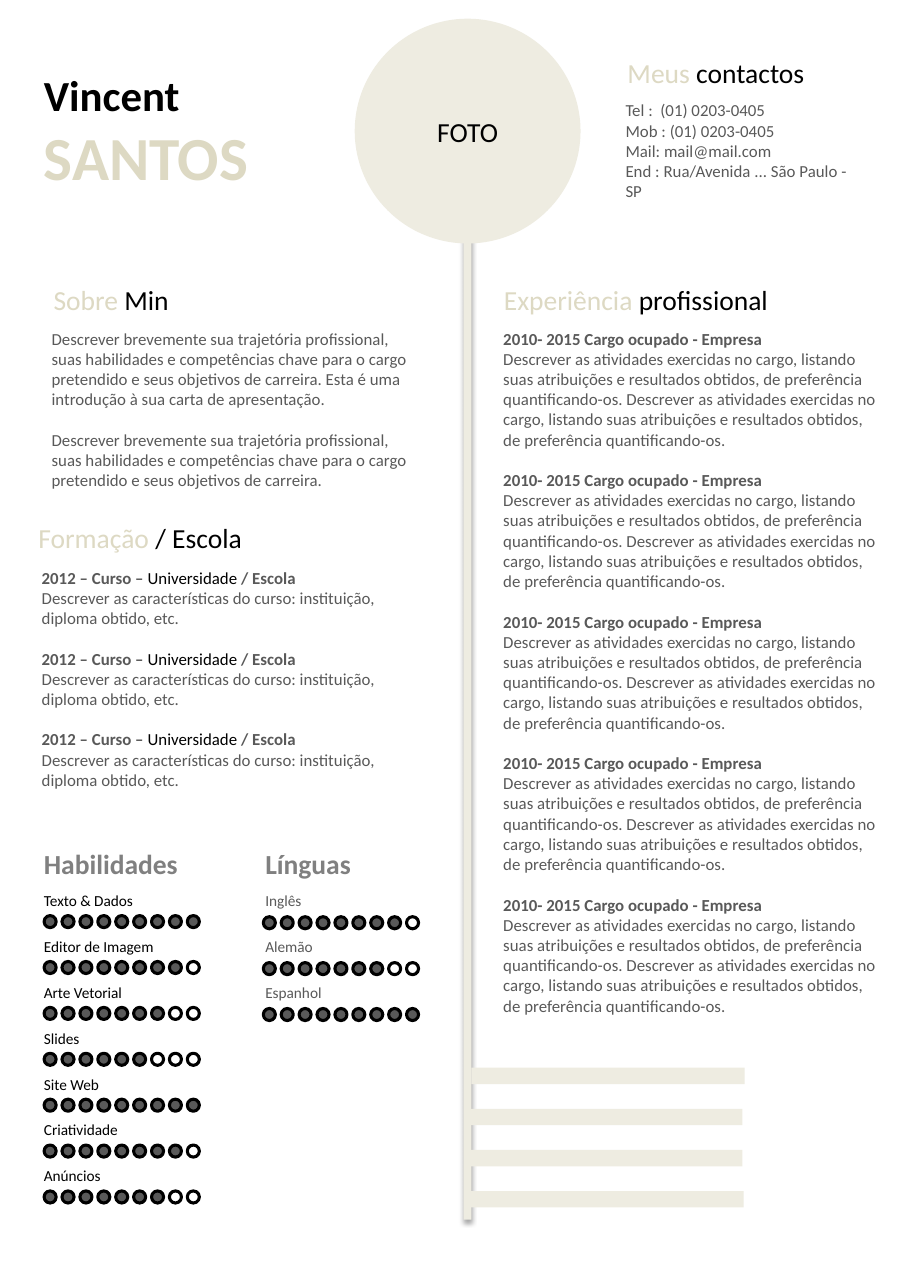
from lxml import etree
from pptx import Presentation
from pptx.dml.color import RGBColor
from pptx.enum import shapes, text
from pptx.oxml import ns
from pptx.util import Inches, Pt

COLORS = {"cream": "EEECE1", "sand": "DDD9C3", "gray": "595959",
          "heading": "808080", "black": "000000", "white": "FFFFFF"}
FONT = "Calibri"
LINE_GAP = 13.2
DOT_COUNT, DOT_SIZE, DOT_STEP, ROW_STEP = 9, 0.11, 0.1625, 0.4165
RECT = shapes.MSO_SHAPE.RECTANGLE
OVAL = shapes.MSO_SHAPE.OVAL

ABOUT = ("Descrever brevemente sua trajetória profissional, suas habilidades e "
         "competências chave para o cargo pretendido e seus objetivos de carreira.")
ABOUT_END = " Esta é uma introdução à sua carta de apresentação."
JOB_TITLE = "2010- 2015 Cargo ocupado - Empresa"
JOB_TASKS = ("Descrever as atividades exercidas no cargo, listando suas atribuições e "
             "resultados obtidos, de preferência quantificando-os.")
COURSE = "Descrever as características do curso: instituição, diploma obtido, etc."
CONTACTS = ["Tel :  (01) 0203-0405", "Mob : (01) 0203-0405", "Mail: mail@mail.com",
            "End : Rua/Avenida ... São Paulo - SP"]
SKILLS = [("Texto & Dados", 9), ("Editor de Imagem", 8), ("Arte Vetorial", 7),
          ("Slides", 6), ("Site Web", 9), ("Criatividade", 8), ("Anúncios", 7)]
LANGUAGES = [("Inglês", 8), ("Alemão", 7), ("Espanhol", 9)]


def rgb(name):
    """Return the palette colour with this name."""
    return RGBColor.from_string(COLORS[name])


def add_run(paragraph, words, size=11, color="gray", bold=False):
    """Add one formatted run to a paragraph."""
    run = paragraph.add_run()
    run.text = words
    run.font.name = FONT
    run.font.size = Pt(size)
    run.font.bold = bold
    run.font.color.rgb = rgb(color)


def add_text(slide, box, paragraphs, wrap=True, align=text.PP_ALIGN.LEFT):
    """Add a text box from (space before, runs) pairs."""
    shape = slide.shapes.add_textbox(*map(Inches, box))
    frame = shape.text_frame
    frame.word_wrap = wrap
    frame.auto_size = text.MSO_AUTO_SIZE.SHAPE_TO_FIT_TEXT
    for index, (space, runs) in enumerate(paragraphs):
        paragraph = frame.add_paragraph() if index else frame.paragraphs[0]
        paragraph.alignment = align
        if index and space:
            paragraph.space_before = Pt(space)
        for run in runs:
            add_run(paragraph, *run)


def add_heading(slide, box, tinted, plain, align=text.PP_ALIGN.RIGHT):
    """Add a two-colour section heading."""
    runs = [(tinted, 18, "sand"), (plain, 18, "black")]
    add_text(slide, box, [(0, runs)], False, align)


def add_block(slide, kind, box, fill, line=None):
    """Add a filled preset shape with an optional outline."""
    shape = slide.shapes.add_shape(kind, *map(Inches, box))
    shape.shadow.inherit = False
    shape.fill.solid()
    shape.fill.fore_color.rgb = rgb(fill)
    if line:
        shape.line.color.rgb = rgb(line)
        shape.line.width = Pt(2)
    else:
        shape.line.fill.background()
    return shape


def add_spine(slide):
    """Add the central vertical bar with its soft shadow."""
    shape = add_block(slide, RECT, (4.21, 1.99, 0.07, 9.08), "cream")
    effects = shape._element.spPr.find(ns.qn("a:effectLst"))
    shadow = etree.SubElement(effects, ns.qn("a:outerShdw"), blurRad="40000",
                              dist="23000", dir="5400000", rotWithShape="0")
    color = etree.SubElement(shadow, ns.qn("a:srgbClr"), val=COLORS["black"])
    etree.SubElement(color, ns.qn("a:alpha"), val="35000")


def add_photo(slide):
    """Add the round photo placeholder."""
    shape = add_block(slide, OVAL, (3.22, 0.17, 2.05, 2.04), "cream")
    shape.text_frame.vertical_anchor = text.MSO_ANCHOR.MIDDLE
    paragraph = shape.text_frame.paragraphs[0]
    paragraph.alignment = text.PP_ALIGN.CENTER
    add_run(paragraph, "FOTO", 18, "black")


def add_ratings(slide, box, title, ratings, color, dot_left, dot_top):
    """Add a titled list with a row of rating dots under each entry."""
    paragraphs = [(0, [(title, 18, "heading", True)])]
    for row, (label, level) in enumerate(ratings):
        paragraphs.append((18 if row else 7, [(label, 10, color)]))
        for column in range(DOT_COUNT):
            dot = (dot_left + column * DOT_STEP, dot_top + row * ROW_STEP,
                   DOT_SIZE, DOT_SIZE)
            add_block(slide, OVAL, dot, "gray" if column < level else "white", "black")
    add_text(slide, box, paragraphs)


def main():
    """Build the résumé slide."""
    presentation = Presentation()
    presentation.slide_width = Inches(8.27)
    presentation.slide_height = Inches(11.69)
    slide = presentation.slides.add_slide(presentation.slide_layouts[6])

    add_spine(slide)
    add_photo(slide)
    add_text(slide, (0.3, 0.57, 2.08, 1.25),
             [(0, [("Vincent", 28, "black", True)]),
              (0, [("SANTOS", 40, "sand", True)])], False)

    add_heading(slide, (5.58, 0.46, 1.82, 0.4), "Meus ", "contactos")
    add_text(slide, (5.58, 0.86, 2.22, 1.03), [(0, [(line,)]) for line in CONTACTS])

    add_heading(slide, (0.37, 2.52, 1.26, 0.4), "Sobre", " Min")
    add_text(slide, (0.37, 2.93, 3.49, 1.58),
             [(0, [(ABOUT + ABOUT_END,)]), (LINE_GAP, [(ABOUT,)])])

    add_heading(slide, (4.44, 2.52, 2.63, 0.4), "Experiência ", "profissional")
    job = [(LINE_GAP, [(JOB_TITLE, 11, "gray", True)]),
           (0, [(f"{JOB_TASKS} {JOB_TASKS}",)])]
    add_text(slide, (4.47, 2.93, 3.65, 6.77), job * 5)

    add_heading(slide, (0.25, 4.68, 2.07, 0.4), "Formação", " / Escola",
                text.PP_ALIGN.LEFT)
    course = [(LINE_GAP, [("2012 – Curso – ", 11, "gray", True),
                          ("Universidade ", 11, "black"),
                          ("/ Escola", 11, "gray", True)]),
              (0, [(COURSE,)])]
    add_text(slide, (0.28, 5.1, 3.59, 2.32), course * 3)

    add_ratings(slide, (0.3, 7.64, 1.92, 3.19), "Habilidades", SKILLS, "black", 0.4, 8.31)
    add_ratings(slide, (2.31, 7.64, 1.92, 1.53), "Línguas", LANGUAGES, "gray", 2.39, 8.32)

    for row, left in enumerate((4.28, 4.26, 4.26, 4.27)):
        add_block(slide, RECT, (left, 9.69 + row * 0.3733, 2.48, 0.15), "cream")

    presentation.save("out.pptx")


if __name__ == "__main__":
    main()
